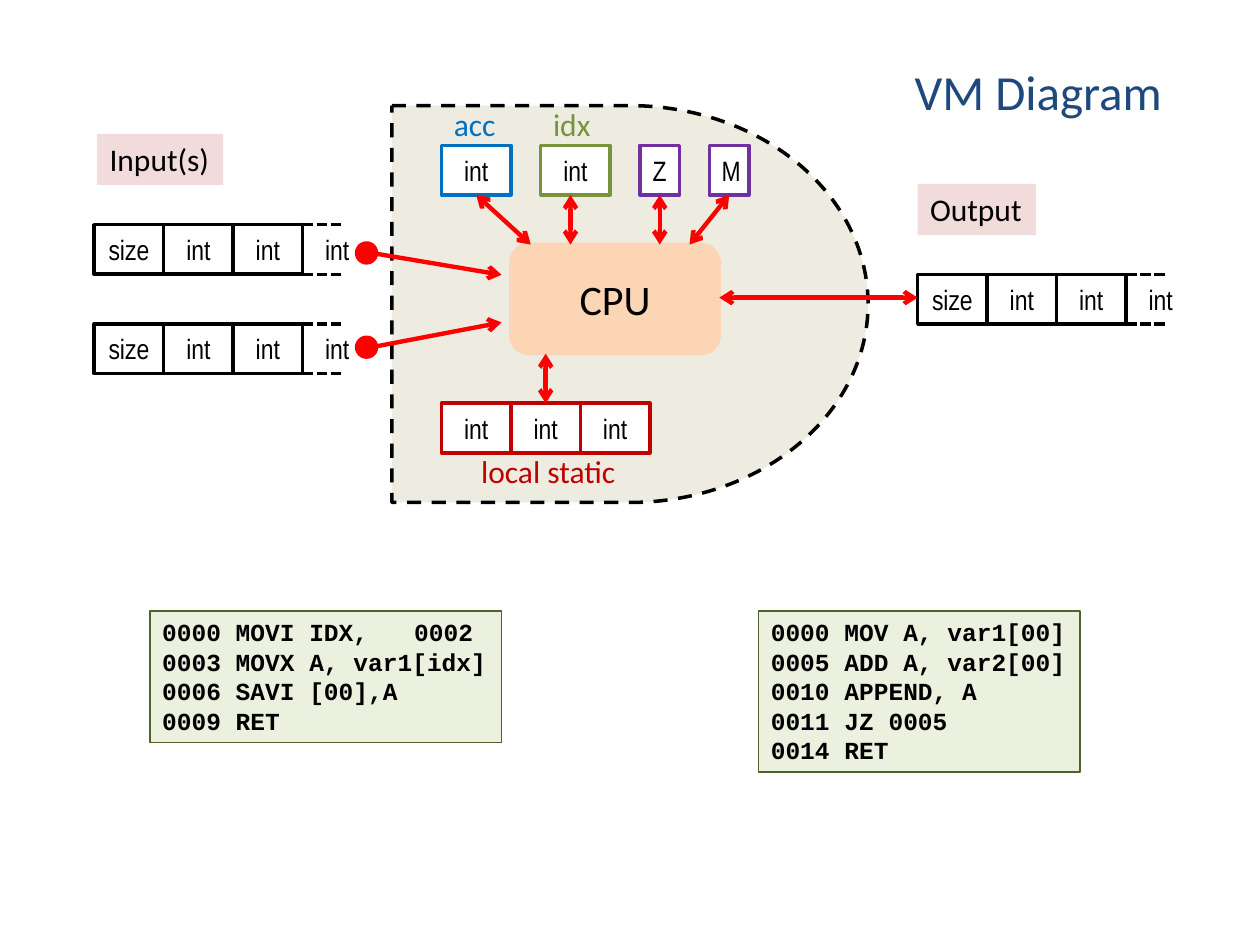
from lxml import etree
from pptx import Presentation
from pptx import util as u
from pptx.dml.color import RGBColor
from pptx.enum import dml, shapes, text
from pptx.oxml import ns

BLACK = RGBColor(0x00, 0x00, 0x00)
WHITE = RGBColor(0xFF, 0xFF, 0xFF)
NAVY = RGBColor(0x1F, 0x49, 0x7D)
RED = RGBColor(0xFF, 0x00, 0x00)
DARK_RED = RGBColor(0xC0, 0x00, 0x00)
BLUE = RGBColor(0x00, 0x70, 0xC0)
GREEN = RGBColor(0x77, 0x93, 0x3C)
PURPLE = RGBColor(0x70, 0x30, 0xA0)
BEIGE = RGBColor(0xEE, 0xEC, 0xE1)
PEACH = RGBColor(0xFC, 0xD5, 0xB5)
PINK = RGBColor(0xF2, 0xDC, 0xDB)
PALE_GREEN = RGBColor(0xEB, 0xF1, 0xDE)
DARK_GREEN = RGBColor(0x4F, 0x62, 0x28)

KIND = shapes.MSO_SHAPE
CELL_WIDTH, CELL_HEIGHT = 1.4, 1.0  # all lengths are in cm


def write_text(shape, content, size, font, color=BLACK, bold=False, align=text.PP_ALIGN.LEFT):
    shape.text_frame.text = content
    for paragraph in shape.text_frame.paragraphs:
        paragraph.alignment = align
        for run in paragraph.runs:
            run.font.size = u.Pt(size)
            run.font.name = font
            run.font.bold = bold
            run.font.color.rgb = color


def add_block(slide, kind, left, top, width, height, fill, line=None, line_width=2):
    shape = slide.shapes.add_shape(kind, u.Cm(left), u.Cm(top), u.Cm(width), u.Cm(height))
    shape.shadow.inherit = False
    shape.fill.solid()
    shape.fill.fore_color.rgb = fill
    if line is None:
        shape.line.fill.background()
    else:
        shape.line.color.rgb = line
        shape.line.width = u.Pt(line_width)
    return shape


def add_line(slide, start, end, color, width):
    connector = slide.shapes.add_connector(
        shapes.MSO_CONNECTOR.STRAIGHT, *(u.Cm(value) for value in (*start, *end)))
    connector.line.color.rgb = color
    connector.line.width = u.Pt(width)
    etree.SubElement(connector._element.spPr, ns.qn("a:effectLst"))
    return connector


def add_arrow(slide, start, end, both_ends=True):
    connector = add_line(slide, start, end, RED, 2.5)
    line = connector.line._get_or_add_ln()
    for tag in ("a:headEnd", "a:tailEnd") if both_ends else ("a:tailEnd",):
        etree.SubElement(line, ns.qn(tag), type="arrow")


def add_cell(slide, left, top, content, line, width=CELL_WIDTH):
    cell = add_block(slide, KIND.RECTANGLE, left, top, width, CELL_HEIGHT, WHITE, line)
    cell.text_frame.vertical_anchor = text.MSO_ANCHOR.MIDDLE
    write_text(cell, content, 16, "Arial Narrow", align=text.PP_ALIGN.CENTER)


def fit_text(shape):
    """Let the box grow with its unwrapped text, which starts at the top."""
    frame = shape.text_frame
    frame.word_wrap = False
    frame.auto_size = text.MSO_AUTO_SIZE.SHAPE_TO_FIT_TEXT
    frame.vertical_anchor = text.MSO_ANCHOR.TOP


def add_label(slide, left, top, width, content, color, size=18, height=1.03,
              align=text.PP_ALIGN.LEFT):
    label = slide.shapes.add_textbox(u.Cm(left), u.Cm(top), u.Cm(width), u.Cm(height))
    fit_text(label)
    write_text(label, content, size, "Calibri", color, align=align)


def add_tag(slide, left, top, width, content):
    tag = add_block(slide, KIND.RECTANGLE, left, top, width, 1.03, PINK)
    fit_text(tag)
    write_text(tag, content, 18, "Calibri")


def add_open_array(slide, left, top):
    """Row of cells whose last one is left open with dashed edges."""
    open_left = left + 3 * CELL_WIDTH
    add_cell(slide, open_left, top, "int", WHITE)
    for index, content in enumerate(("size", "int", "int")):
        add_cell(slide, left + index * CELL_WIDTH, top, content, BLACK)
    for y in (top, top + CELL_HEIGHT):
        edge = add_line(slide, (open_left, y), (open_left + 0.8, y), BLACK, 2)
        edge.line.dash_style = dml.MSO_LINE.SQUARE_DOT


def add_machine(slide, left, top):
    body = add_block(slide, KIND.FLOWCHART_DELAY, left, top, 9.6, 8, BEIGE, BLACK)
    body.line.dash_style = dml.MSO_LINE.DASH

    for offset, name, color, width in ((1, "acc", BLUE, 1.37), (3, "idx", GREEN, 1.27)):
        add_cell(slide, left + offset, top + 0.8, "int", color)
        add_label(slide, left + offset, top - 0.13, width, name, color)
    for offset, flag in ((5, "Z"), (6.4, "M")):
        add_cell(slide, left + offset, top + 0.8, flag, PURPLE, width=0.8)

    for index in range(3):
        add_cell(slide, left + 1 + index * CELL_WIDTH, top + 6, "int", DARK_RED)
    add_label(slide, left + 1.55, top + 6.86, 3.25, "local static", DARK_RED)

    cpu = add_block(slide, KIND.ROUNDED_RECTANGLE, left + 2.4, top + 2.8, 4.2, 2.2, PEACH, PEACH)
    cpu.text_frame.vertical_anchor = text.MSO_ANCHOR.MIDDLE
    write_text(cpu, "CPU", 24, "Calibri", align=text.PP_ALIGN.CENTER)

    for register_x, cpu_x in ((1.7, 2.8), (3.6, 3.6), (5.4, 5.4), (6.8, 6)):
        add_arrow(slide, (left + register_x, top + 1.8), (left + cpu_x, top + 2.8))
    add_arrow(slide, (left + 3.1, top + 5), (left + 3.1, top + 6))


def add_inputs(slide, left, top):
    add_tag(slide, left + 0.06, top, 2.54, "Input(s)")
    for array_y, dot_y, tip_y in ((1.83, 2.4, 2.84), (3.83, 4.3, 3.8)):
        add_open_array(slide, left, top + array_y)
        add_arrow(slide, (left + 5.59, top + dot_y), (left + 8.21, top + tip_y), both_ends=False)
        add_block(slide, KIND.OVAL, left + 5.29, top + dot_y - 0.2, 0.4, 0.4, RED, RED)


def add_output(slide, left, top):
    add_tag(slide, left, top, 2.39, "Output")
    add_open_array(slide, left, top + 1.82)
    add_arrow(slide, (left - 4, top + 2.29), (left, top + 2.29))


def add_listing(slide, left, top, width, height, lines):
    listing = add_block(slide, KIND.RECTANGLE, left, top, width, height,
                        PALE_GREEN, DARK_GREEN, line_width=1)
    fit_text(listing)
    write_text(listing, "\n".join(lines), 14, "Courier New", bold=True)


def main():
    presentation = Presentation()
    presentation.slide_width = u.Cm(25.4)
    presentation.slide_height = u.Cm(19.05)
    slide = presentation.slides.add_slide(presentation.slide_layouts[6])

    add_machine(slide, 7.9, 2.13)
    add_label(slide, 18.16, 1.12, 5.54, "VM Diagram", NAVY, size=28, height=1.45,
              align=text.PP_ALIGN.CENTER)
    add_inputs(slide, 1.9, 2.7)
    add_output(slide, 18.5, 3.71)
    add_listing(slide, 3.02, 12.32, 7.09, 2.65, (
        "0000 MOVI IDX,\t0002",
        "0003 MOVX A, var1[idx]",
        "0006 SAVI [00],A",
        "0009 RET",
    ))
    add_listing(slide, 15.29, 12.32, 6.48, 3.25, (
        "0000 MOV A, var1[00]",
        "0005 ADD A, var2[00]",
        "0010 APPEND, A",
        "0011 JZ 0005",
        "0014 RET",
    ))
    presentation.save("out.pptx")


if __name__ == "__main__":
    main()
